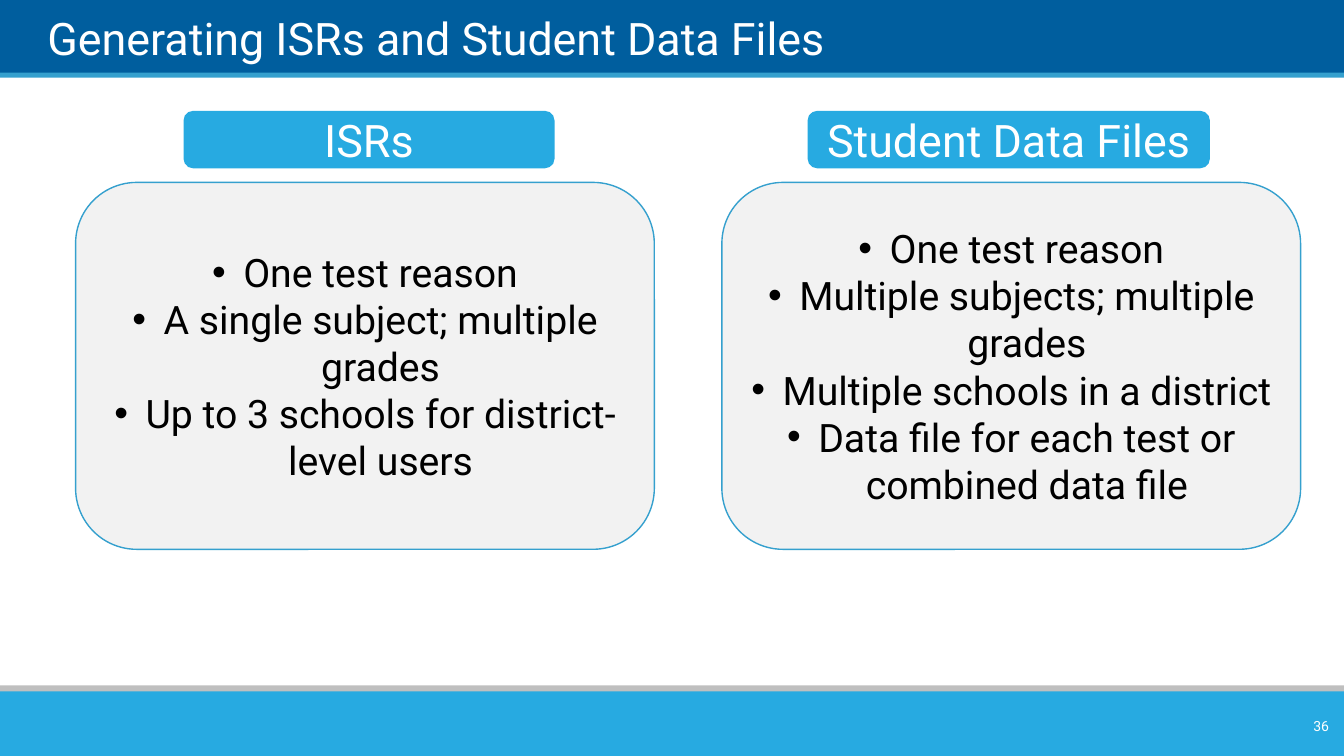
from lxml import etree
from pptx import Presentation
from pptx.dml.color import RGBColor
from pptx.enum import shapes, text
from pptx.oxml import ns
from pptx.util import Inches, Pt

NAVY = RGBColor(0x00, 0x5E, 0x9E)
BLUE = RGBColor(0x35, 0xA0, 0xCE)
SKY = RGBColor(0x27, 0xAA, 0xE1)
SILVER = RGBColor(0xBF, 0xBF, 0xBF)
PALE = RGBColor(0xF2, 0xF2, 0xF2)
WHITE = RGBColor(0xFF, 0xFF, 0xFF)
BLACK = RGBColor(0x00, 0x00, 0x00)

prs = Presentation()
prs.slide_width, prs.slide_height = Inches(13.33), Inches(7.5)
slide = prs.slides.add_slide(prs.slide_layouts[5])


def add_block(kind, left, top, width, height, fill, outline=None):
    block = slide.shapes.add_shape(
        kind, Inches(left), Inches(top), Inches(width), Inches(height))
    block.shadow.inherit = False
    block.fill.solid()
    block.fill.fore_color.rgb = fill
    if outline is None:
        block.line.fill.background()
    else:
        block.line.color.rgb = outline
        block.line.width = Pt(1)
    return block


def style_text(frame, size, color, align):
    for paragraph in frame.paragraphs:
        paragraph.alignment = align
        paragraph.font.size = Pt(size)
        for run in paragraph.runs:
            run.font.name = "Roboto"
            run.font.size = Pt(size)
            run.font.color.rgb = color


for top, height, color in [
    (-0.01, 0.75, NAVY),
    (0.72, 0.05, BLUE),
    (6.8, 0.14, SILVER),
    (6.86, 0.64, SKY),
]:
    add_block(shapes.MSO_SHAPE.RECTANGLE, 0, top, 13.33, height, color)

title = slide.shapes.title
slide.shapes._spTree.append(title._element)
title.left, title.top = Inches(0.47), Inches(0.07)
title.width, title.height = Inches(12.05), Inches(0.57)
heading = title.text_frame
heading.text = "Generating ISRs and Student Data Files"
heading.auto_size = text.MSO_AUTO_SIZE.NONE
heading.vertical_anchor = text.MSO_ANCHOR.BOTTOM
heading.margin_left = heading.margin_right = 0
heading.margin_top = heading.margin_bottom = 0
style_text(heading, 32, WHITE, text.PP_ALIGN.LEFT)

columns = [
    ("ISRs", 0.75, 1.82, 3.68, [
        "One test reason",
        "A single subject; multiple grades",
        "Up to 3 schools for district-level users",
    ]),
    ("Student Data Files", 7.16, 8.01, 3.99, [
        "One test reason",
        "Multiple subjects; multiple grades",
        "Multiple schools in a district",
        "Data file for each test or combined data file",
    ]),
]
for label, panel_left, label_left, label_width, points in columns:
    panel = add_block(shapes.MSO_SHAPE.ROUNDED_RECTANGLE,
                      panel_left, 1.81, 5.74, 3.64, PALE, BLUE)
    panel.text_frame.text = "\n".join(points)
    panel.text_frame.vertical_anchor = text.MSO_ANCHOR.MIDDLE
    for point in panel.text_frame.paragraphs:
        properties = point._p.get_or_add_pPr()
        properties.set("marL", str(Inches(0.31)))
        properties.set("indent", str(-Inches(0.31)))
        etree.SubElement(properties, ns.qn("a:buFont"), typeface="Arial")
        etree.SubElement(properties, ns.qn("a:buChar"), char="•")
    style_text(panel.text_frame, 28, BLACK, text.PP_ALIGN.CENTER)

    tab = add_block(shapes.MSO_SHAPE.ROUNDED_RECTANGLE,
                    label_left, 1.1, label_width, 0.57, SKY)
    tab.text_frame.text = label
    tab.text_frame.vertical_anchor = text.MSO_ANCHOR.MIDDLE
    style_text(tab.text_frame, 32, WHITE, text.PP_ALIGN.CENTER)

page_number = slide.shapes.add_textbox(
    Inches(12.51), Inches(7.05), Inches(0.77), Inches(0.3)).text_frame
page_number.text = "36"
page_number.word_wrap = True
page_number.vertical_anchor = text.MSO_ANCHOR.MIDDLE
style_text(page_number, 10, WHITE, text.PP_ALIGN.RIGHT)

prs.save("out.pptx")
